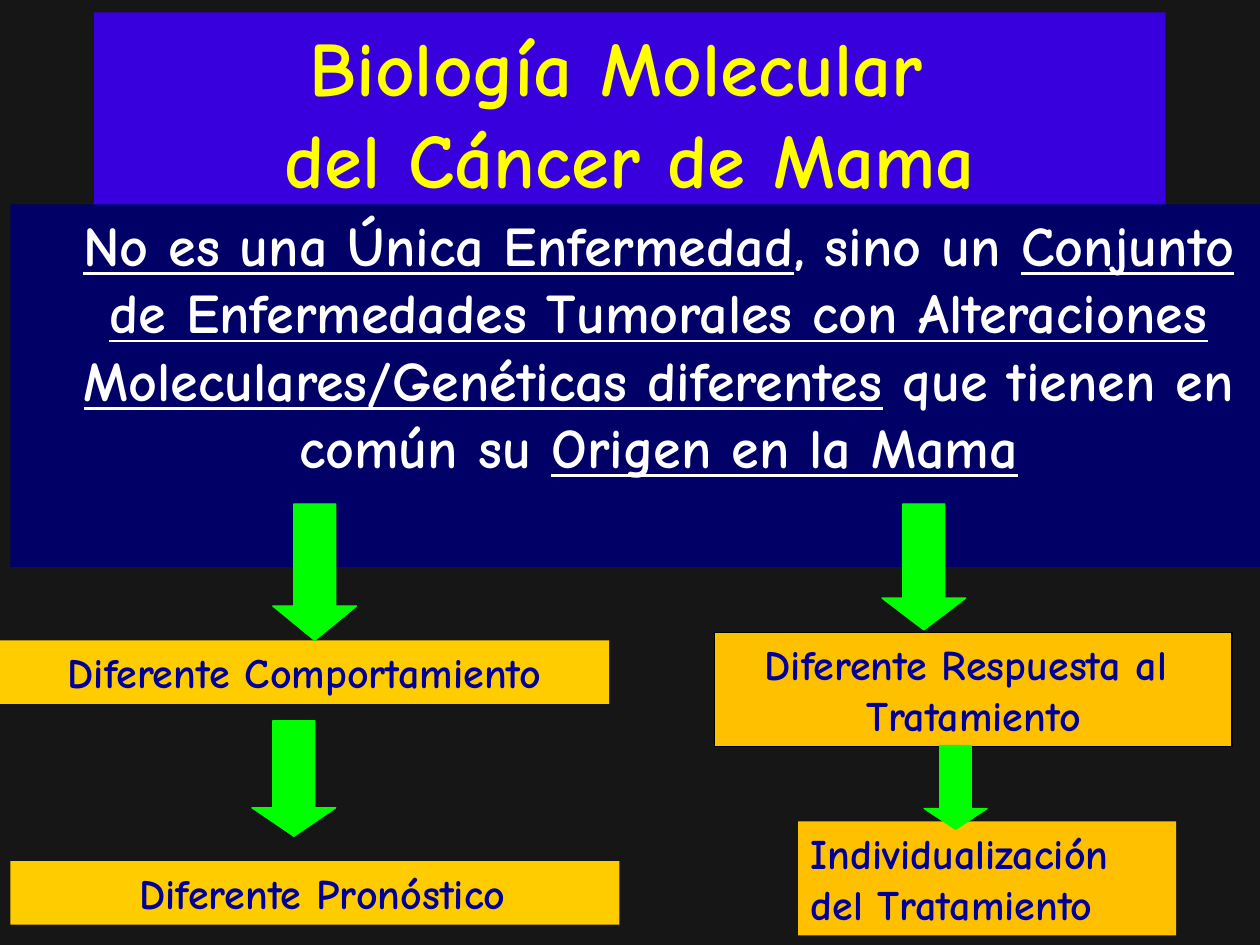
from dataclasses import dataclass
from typing import Any

from pptx import Presentation
from pptx.dml.color import RGBColor
from pptx.enum.shapes import MSO_SHAPE
from pptx.enum.text import MSO_ANCHOR, PP_ALIGN
from pptx.util import Cm, Pt

BACKGROUND = RGBColor(0x16, 0x16, 0x16)
VIOLET = RGBColor(0x38, 0x00, 0xDC)
NAVY = RGBColor(0x00, 0x00, 0x66)
AMBER = RGBColor(0xFF, 0xC0, 0x00)
GOLD = RGBColor(0xFF, 0xCC, 0x00)
GREEN = RGBColor(0x00, 0xFF, 0x00)
YELLOW = RGBColor(0xFF, 0xFF, 0x00)
WHITE = RGBColor(0xFF, 0xFF, 0xFF)
BLUE = RGBColor(0x00, 0x00, 0x99)
BLACK = RGBColor(0x00, 0x00, 0x00)

Run = tuple[str, bool]


@dataclass(frozen=True)
class Area:
    left: float
    top: float
    width: float
    height: float

    def lengths(self) -> tuple[Cm, Cm, Cm, Cm]:
        return Cm(self.left), Cm(self.top), Cm(self.width), Cm(self.height)


@dataclass(frozen=True)
class Panel:
    area: Area
    fill: RGBColor
    paragraphs: list[list[Run]]
    size: int = 24
    color: RGBColor = BLUE
    align: PP_ALIGN = PP_ALIGN.CENTER
    anchor: MSO_ANCHOR = MSO_ANCHOR.TOP
    left_inset: float = 0.25
    outline: RGBColor | None = None


@dataclass(frozen=True)
class Arrow:
    area: Area
    head: float


def plain(*lines: str) -> list[list[Run]]:
    return [[(line, False)] for line in lines]


def apply(target: Any, values: dict[str, Any]) -> None:
    for attribute, value in values.items():
        setattr(target, attribute, value)


def add_block(slide: Any, preset: MSO_SHAPE, area: Area,
              fill: RGBColor, outline: RGBColor | None) -> Any:
    block = slide.shapes.add_shape(preset, *area.lengths())
    block.shadow.inherit = False
    block.fill.solid()
    block.fill.fore_color.rgb = fill
    if outline is None:
        block.line.fill.background()
    else:
        block.line.color.rgb = outline
        block.line.width = Pt(0.75)
    return block


def draw_panel(slide: Any, panel: Panel) -> None:
    block = add_block(slide, MSO_SHAPE.RECTANGLE, panel.area, panel.fill, panel.outline)
    frame = block.text_frame
    apply(frame, {
        "word_wrap": True,
        "vertical_anchor": panel.anchor,
        "margin_left": Cm(panel.left_inset),
        "margin_right": Cm(0.25),
        "margin_top": Cm(0.13),
        "margin_bottom": Cm(0.13),
    })
    for index, runs in enumerate(panel.paragraphs):
        paragraph = frame.add_paragraph() if index else frame.paragraphs[0]
        paragraph.alignment = panel.align
        for text, underline in runs:
            run = paragraph.add_run()
            run.text = text
            apply(run.font, {"name": "Comic Neue", "size": Pt(panel.size),
                             "bold": True, "underline": underline})
            run.font.color.rgb = panel.color


def draw_arrow(slide: Any, arrow: Arrow) -> None:
    block = add_block(slide, MSO_SHAPE.DOWN_ARROW, arrow.area, GREEN, GREEN)
    block.adjustments[0] = 0.5
    block.adjustments[1] = arrow.head


TITLE = Panel(Area(1.9, 0.25, 21.6, 4), VIOLET,
              plain("Biología Molecular ", "del Cáncer de Mama"),
              size=44, color=YELLOW, anchor=MSO_ANCHOR.MIDDLE)
DEFINITION = Panel(Area(0.21, 4.12, 25.19, 7.31), NAVY, [[
    ("No es una Única Enfermedad", True),
    (", sino un ", False),
    ("Conjunto de Enfermedades Tumorales con Alteraciones "
     "Moleculares/Genéticas diferentes", True),
    (" que tienen en común su ", False),
    ("Origen en la Mama", True),
]], size=32, color=WHITE, left_inset=1.2)
RESPONSE = Panel(Area(14.41, 12.75, 10.43, 2.3), AMBER,
                 plain("Diferente Respuesta al ", "Tratamiento"), outline=BLACK)
BEHAVIOUR = Panel(Area(0, 12.91, 12.28, 1.28), GOLD, plain("Diferente Comportamiento"))
PROGNOSIS = Panel(Area(0.21, 17.36, 12.28, 1.28), GOLD, plain(" Diferente Pronóstico"))
INDIVIDUAL = Panel(Area(16.09, 16.56, 7.62, 2.3), AMBER,
                   plain("Individualización", "del Tratamiento"), align=PP_ALIGN.LEFT)

PANELS = [TITLE, DEFINITION, RESPONSE, BEHAVIOUR, PROGNOSIS, INDIVIDUAL]
ARROWS = [
    Arrow(Area(5.5, 10.16, 1.69, 2.75), 0.41),
    Arrow(Area(17.78, 10.16, 1.69, 2.54), 0.38),
    Arrow(Area(5.08, 14.53, 1.69, 2.33), 0.34),
    Arrow(Area(18.63, 15.03, 1.27, 1.69), 0.33),
]


def main() -> None:
    """Build the slide on the molecular biology of breast cancer."""
    presentation = Presentation()
    apply(presentation, {"slide_width": Cm(25.4), "slide_height": Cm(19.05)})
    slide = presentation.slides.add_slide(presentation.slide_layouts[6])
    slide.background.fill.solid()
    slide.background.fill.fore_color.rgb = BACKGROUND
    for panel in PANELS:
        draw_panel(slide, panel)
    for arrow in ARROWS:
        draw_arrow(slide, arrow)
    presentation.save("out.pptx")


if __name__ == "__main__":
    main()
